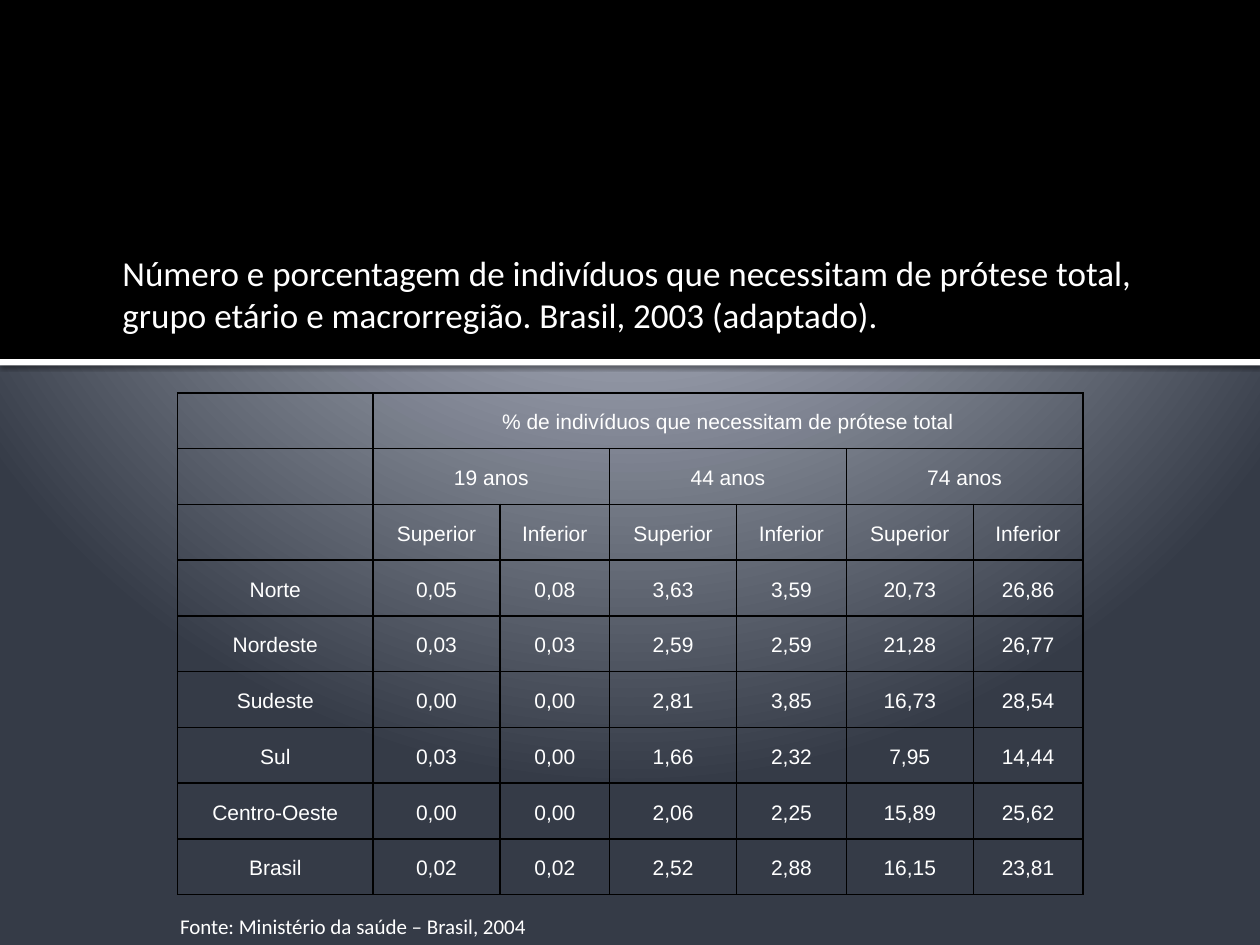
"""Build the slide on the need for total dental prostheses in Brazil."""
from pptx import Presentation, oxml
from pptx import util as u
from pptx.dml import color
from pptx.enum import shapes, text

WIDTH, HEIGHT = 25.4, 19.05
BLACK, WHITE = "000000", "FFFFFF"
NAMESPACE = 'xmlns:a="http://schemas.openxmlformats.org/drawingml/2006/main"'
P_NAMESPACE = 'xmlns:p="http://schemas.openxmlformats.org/presentationml/2006/main"'

TITLE = ("Número e porcentagem de indivíduos que necessitam de prótese total, "
         "grupo etário e macrorregião. Brasil, 2003 (adaptado).")
SOURCE = "Fonte: Ministério da saúde – Brasil, 2004"
HEADING = "% de indivíduos que necessitam de prótese total"
AGES = ["19 anos", "44 anos", "74 anos"]
ARCHES = ["Superior", "Inferior"]
REGIONS = [
    ("Norte", "0,05", "0,08", "3,63", "3,59", "20,73", "26,86"),
    ("Nordeste", "0,03", "0,03", "2,59", "2,59", "21,28", "26,77"),
    ("Sudeste", "0,00", "0,00", "2,81", "3,85", "16,73", "28,54"),
    ("Sul", "0,03", "0,00", "1,66", "2,32", "7,95", "14,44"),
    ("Centro-Oeste", "0,00", "0,00", "2,06", "2,25", "15,89", "25,62"),
    ("Brasil", "0,02", "0,02", "2,52", "2,88", "16,15", "23,81"),
]
BACKGROUND_STOPS = [(0, "C1C5D3"), (12, "C1C5D3"), (20, "BFC4D2"), (100, "353B47")]
COLUMN_WIDTHS = [3.94] + [2.56, 2.21] * len(AGES)
TABLE_LEFT, TABLE_TOP, TABLE_HEIGHT = 3.58, 7.92, 10.12


def rgb(value):
    return color.RGBColor.from_string(value)


def set_font(paragraph, name, size):
    paragraph.font.name = name
    paragraph.font.size = u.Pt(size)
    paragraph.font.color.rgb = rgb(WHITE)


def set_background(slide):
    stops = "".join(f'<a:gs pos="{position * 1000}"><a:srgbClr val="{value}"/></a:gs>'
                    for position, value in BACKGROUND_STOPS)
    background = oxml.parse_xml(
        f'<p:bg {P_NAMESPACE} {NAMESPACE}><p:bgPr><a:gradFill rotWithShape="1">'
        f'<a:gsLst>{stops}</a:gsLst><a:path path="circle">'
        '<a:fillToRect l="10000" t="-25000" r="10000" b="125000"/></a:path>'
        '</a:gradFill><a:effectLst/></p:bgPr></p:bg>')
    slide.element.cSld.insert(0, background)


def add_band(slide, top, height, fill):
    band = slide.shapes.add_shape(shapes.MSO_SHAPE.RECTANGLE, 0, u.Cm(top),
                                  u.Cm(WIDTH), u.Cm(height))
    band.shadow.inherit = False
    band.fill.solid()
    band.fill.fore_color.rgb = rgb(fill)
    band.line.fill.background()
    return band


def add_shadow(shape):
    effects = shape.element.spPr.find(oxml.ns.qn("a:effectLst"))
    effects.append(oxml.parse_xml(
        f'<a:outerShdw {NAMESPACE} blurRad="{u.Pt(2.5)}" dist="{u.Pt(0.8)}" dir="5400000">'
        f'<a:srgbClr val="{BLACK}"><a:alpha val="60000"/></a:srgbClr></a:outerShdw>'))


def add_label(slide, words, box, size):
    label = slide.shapes.add_textbox(*map(u.Cm, box))
    paragraph = label.text_frame.paragraphs[0]
    paragraph.text = words
    set_font(paragraph, "Calibri", size)
    return label.text_frame


def style_cell(cell):
    cell.vertical_anchor = text.MSO_ANCHOR.MIDDLE
    cell.margin_left = cell.margin_right = u.Cm(0.18)
    cell.margin_top = cell.margin_bottom = 0
    paragraph = cell.text_frame.paragraphs[0]
    paragraph.alignment = text.PP_ALIGN.CENTER
    paragraph.line_spacing = 1.15
    set_font(paragraph, "Arial", 12)
    cell.fill.background()
    properties = cell._tc.get_or_add_tcPr()
    for index, side in enumerate("LRTB"):
        properties.insert(index, oxml.parse_xml(
            f'<a:ln{side} {NAMESPACE} w="{u.Pt(1)}"><a:solidFill>'
            f'<a:srgbClr val="{BLACK}"/></a:solidFill></a:ln{side}>'))


def add_region_table(slide):
    age_row = [""] + [label for age in AGES for label in (age, "")]
    rows = [["", HEADING], age_row, [""] + ARCHES * len(AGES), *REGIONS]
    table = slide.shapes.add_table(
        len(rows), len(COLUMN_WIDTHS), u.Cm(TABLE_LEFT), u.Cm(TABLE_TOP),
        u.Cm(sum(COLUMN_WIDTHS)), u.Cm(TABLE_HEIGHT)).table
    table.first_row = table.horz_banding = False
    for column, width in zip(table.columns, COLUMN_WIDTHS):
        column.width = u.Cm(width)
    for row_index, values in enumerate(rows):
        table.rows[row_index].height = u.Cm(TABLE_HEIGHT / len(rows))
        for column_index, value in enumerate(values):
            table.cell(row_index, column_index).text = value
    for cell in table.iter_cells():
        style_cell(cell)
    table.cell(0, 1).merge(table.cell(0, len(COLUMN_WIDTHS) - 1))
    for first in range(1, len(COLUMN_WIDTHS), len(ARCHES)):
        table.cell(1, first).merge(table.cell(1, first + len(ARCHES) - 1))


def main():
    presentation = Presentation()
    presentation.slide_width, presentation.slide_height = u.Cm(WIDTH), u.Cm(HEIGHT)
    slide = presentation.slides.add_slide(presentation.slide_layouts[6])
    set_background(slide)
    add_band(slide, 0, 7.24, BLACK)
    add_shadow(add_band(slide, 7.24, 0.13, WHITE))
    title = add_label(slide, TITLE, (2.06, 5.08, 22.15, 1.9), 20)
    title.word_wrap = True
    title.margin_left, title.margin_right = u.Cm(0.41), u.Cm(0.13)
    title.margin_top = title.margin_bottom = 0
    add_region_table(slide)
    source = add_label(slide, SOURCE, (3.38, 18.29, 7.59, 0.76), 12)
    source.word_wrap = False
    presentation.save("out.pptx")


if __name__ == "__main__":
    main()
